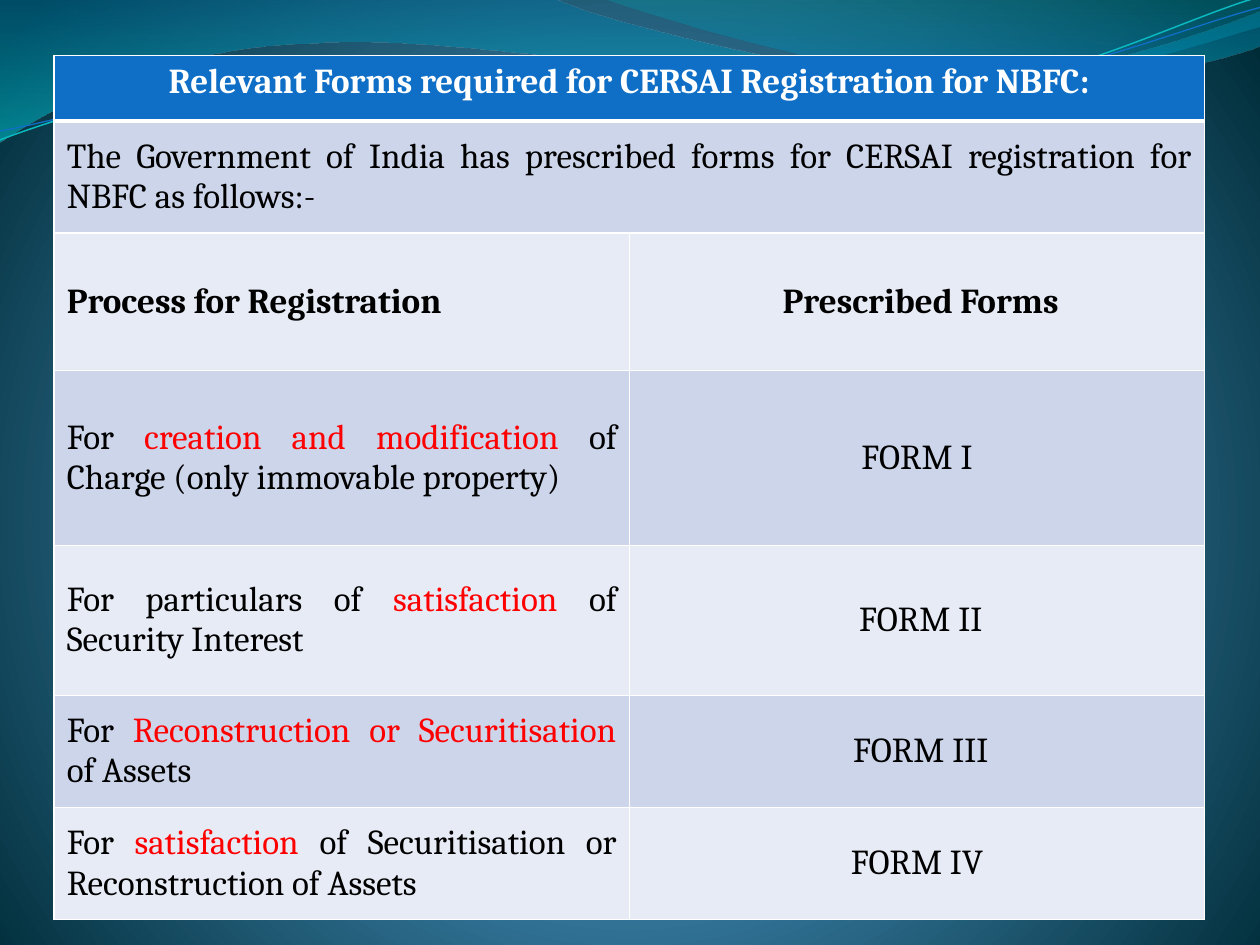
import math
from dataclasses import dataclass

import pptx
import pptx.dml.color
import pptx.enum.text
import pptx.oxml
import pptx.oxml.ns
import pptx.util

Inches, Pt = pptx.util.Inches, pptx.util.Pt
RGB = pptx.dml.color.RGBColor
ALIGN = pptx.enum.text.PP_ALIGN
ANCHOR = pptx.enum.text.MSO_ANCHOR
NS = pptx.oxml.ns.nsdecls("a")


@dataclass(frozen=True)
class Theme:
    font: str = "Cambria"
    size: int = 20
    white: str = "FFFFFF"
    text: str = "000000"
    accent: str = "FF0000"
    header: str = "0F6FC6"
    bands: tuple = ("CCD5EA", "E7EBF5")
    # gradient stops: position %, colour, opacity %
    backdrop: tuple = ((0, "4AA0D6", 100), (25, "4C98C7", 100), (100, "002C38", 100))
    wave: tuple = ((0, "0074A1", 45), (100, "00C6CF", 55))
    crest: tuple = ((0, "00A1A9", 30), (80, "008BBF", 45))
    teal_line: str = "0AB8BF"
    blue_line: str = "0F6FC6"


THEME = Theme()
LINEAR = '<a:lin ang="5400000" scaled="0"/>'
CIRCLE = ('<a:path path="circle"><a:fillToRect l="10000" t="110000" '
          'r="10000" b="100000"/></a:path>')

# Each step is one point (straight) or three points (Bezier curve).
WAVE = [[(0, 0)], [(4.4, -0.01)],
        [(4.76, 0.17), (6.64, 0.63), (7.58, 0.63)],
        [(8.53, 0.63), (9.58, 0.26), (10, 0.09)], [(10.01, 0.36)],
        [(9.83, 0.44), (8.7, 0.76), (7.46, 0.75)],
        [(6.22, 0.75), (3.82, 0.28), (2.57, 0.34)],
        [(1.29, 0.36), (0.46, 0.83), (-0.01, 1.13)], [(0, 0)]]
CREST = [[(4.79, -0.01)],
         [(5.09, 0.11), (6.82, 0.62), (7.69, 0.65)],
         [(8.56, 0.69), (9.61, 0.32), (10, 0.21)], [(10, 0)], [(4.79, -0.01)]]
TEAL_STROKE = [[(0, 1.11)],
               [(0.48, 0.93), (1.58, 0.57), (2.77, 0.52)],
               [(3.95, 0.47), (5.93, 0.89), (7.13, 0.8)],
               [(8.33, 0.71), (9.38, 0.15), (9.98, -0.02)]]
BLUE_STROKE = [[(0, 1.04)],
               [(0.47, 0.96), (1.64, 0.61), (2.83, 0.56)],
               [(4.03, 0.51), (5.97, 0.84), (7.17, 0.75)],
               [(8.36, 0.67), (9.41, 0.21), (10, 0.06)]]
TILT = 357.3

TITLE = "Relevant Forms required for CERSAI Registration for NBFC:"
INTRO = ("The Government of India has prescribed forms for CERSAI "
         "registration for NBFC as follows:-")
HEADINGS = ("Process for Registration", " Prescribed Forms")
# before, highlighted words, after, form
FORMS = [
    ("For ", "creation and modification ", "of Charge (only immovable property)", "FORM I"),
    ("For particulars of ", "satisfaction ", "of Security Interest", " FORM II"),
    ("For ", "Reconstruction or Securitisation ", "of Assets", " FORM III"),
    ("For ", "satisfaction ", "of Securitisation or Reconstruction of Assets", "FORM IV"),
]
ROW_HEIGHTS = (0.52, 0.89, 1.09, 1.39, 1.19, 0.89, 0.89)


def apply_gradient(fill, owner, stops, direction):
    """Swap the solid fill of owner for a gradient."""
    fill.solid()
    solid = owner.xpath(".//a:solidFill")[0]
    gs = ""
    for pos, color, opacity in stops:
        alpha = f'<a:alpha val="{opacity * 1000}"/>' if opacity < 100 else ""
        gs += f'<a:gs pos="{pos * 1000}"><a:srgbClr val="{color}">{alpha}</a:srgbClr></a:gs>'
    grad = pptx.oxml.parse_xml(
        f'<a:gradFill {NS} rotWithShape="1"><a:gsLst>{gs}</a:gsLst>{direction}</a:gradFill>')
    solid.getparent().replace(solid, grad)


def turn(steps, center, degrees):
    a = math.radians(degrees)
    cx, cy = center
    return [[(cx + (x - cx) * math.cos(a) - (y - cy) * math.sin(a),
              cy + (x - cx) * math.sin(a) + (y - cy) * math.cos(a)) for x, y in step]
            for step in steps]


def add_outline(s, steps, close):
    """Build a freeform, then join each three-point step into one Bezier curve."""
    start, *rest = [(Inches(x), Inches(y)) for step in steps for x, y in step]
    builder = s.shapes.build_freeform(*start)
    builder.add_line_segments(rest, close=close)
    sp = builder.convert_to_shape()
    sp.shadow.inherit = False
    lines = iter(sp._element.xpath(".//a:path/a:lnTo"))
    for step in steps[1:]:
        group = [next(lines) for _ in step]
        if len(group) == 3:
            curve = pptx.oxml.parse_xml(f"<a:cubicBezTo {NS}/>")
            group[0].addprevious(curve)
            for line in group:
                curve.append(line[0])
                line.getparent().remove(line)
    return sp


def add_wave(s, steps, stops):
    sp = add_outline(s, steps, True)
    apply_gradient(sp.fill, sp._element.spPr, stops, LINEAR)
    sp.line.fill.background()


def add_stroke(s, steps, center, color, width):
    """Draw a tilted open curve whose steps are given as they appear."""
    sp = add_outline(s, turn(steps, center, -TILT), False)
    sp.rotation = TILT
    sp.fill.background()
    sp.line.color.rgb = RGB.from_string(color)
    sp.line.width = Pt(width)


def set_borders(cell, widths):
    tcPr = cell._tc.get_or_add_tcPr()
    for side, width in widths.items():
        tcPr.append(pptx.oxml.parse_xml(
            f'<a:{side} {NS} w="{Pt(width)}"><a:solidFill><a:srgbClr '
            f'val="{THEME.white}"/></a:solidFill></a:{side}>'))


def write_cell(cell, runs, align, bold=False, anchor=ANCHOR.MIDDLE):
    """Fill a cell with (text, colour) runs."""
    cell.vertical_anchor = anchor
    p = cell.text_frame.paragraphs[0]
    p.alignment = align
    for text, color in runs:
        r = p.add_run()
        r.text = text
        r.font.color.rgb = RGB.from_string(color)
        for name, value in dict(name=THEME.font, size=Pt(THEME.size), bold=bold).items():
            setattr(r.font, name, value)


def add_forms_table(s):
    table = s.shapes.add_table(len(ROW_HEIGHTS), 2, Inches(0.43), Inches(0.44),
                               Inches(9.13), Inches(6.85)).table
    for i, height in enumerate(ROW_HEIGHTS):
        table.rows[i].height = Inches(height)
        color = THEME.bands[(i - 1) % 2] if i else THEME.header
        for cell in table.rows[i].cells:
            set_borders(cell, dict(lnL=1, lnR=1, lnT=3 if i == 1 else 1,
                                   lnB=3 if i == 0 else 1))
            cell.fill.solid()
            cell.fill.fore_color.rgb = RGB.from_string(color)
    for i in (0, 1):
        table.cell(i, 0).merge(table.cell(i, 1))

    write_cell(table.cell(0, 0), [(TITLE, THEME.white)], ALIGN.CENTER, True, ANCHOR.TOP)
    write_cell(table.cell(1, 0), [(INTRO, THEME.text)], ALIGN.JUSTIFY)
    for j, align in enumerate((ALIGN.JUSTIFY, ALIGN.CENTER)):
        write_cell(table.cell(2, j), [(HEADINGS[j], THEME.text)], align, True)
    for i, (before, key, after, form) in enumerate(FORMS, 3):
        write_cell(table.cell(i, 0), [(before, THEME.text), (key, THEME.accent),
                                      (after, THEME.text)], ALIGN.JUSTIFY)
        write_cell(table.cell(i, 1), [(form, THEME.text)], ALIGN.CENTER)


def main():
    prs = pptx.Presentation()
    prs.slide_width, prs.slide_height = Inches(10), Inches(7.5)
    s = prs.slides.add_slide(prs.slide_layouts[6])
    apply_gradient(s.background.fill, s._element.cSld, THEME.backdrop, CIRCLE)
    add_wave(s, WAVE, THEME.wave)
    add_wave(s, CREST, THEME.crest)
    add_stroke(s, TEAL_STROKE, (4.99, 0.58), THEME.teal_line, 0.85)
    add_stroke(s, BLUE_STROKE, (5, 0.59), THEME.blue_line, 0.75)
    add_forms_table(s)
    prs.save("out.pptx")


if __name__ == "__main__":
    main()
